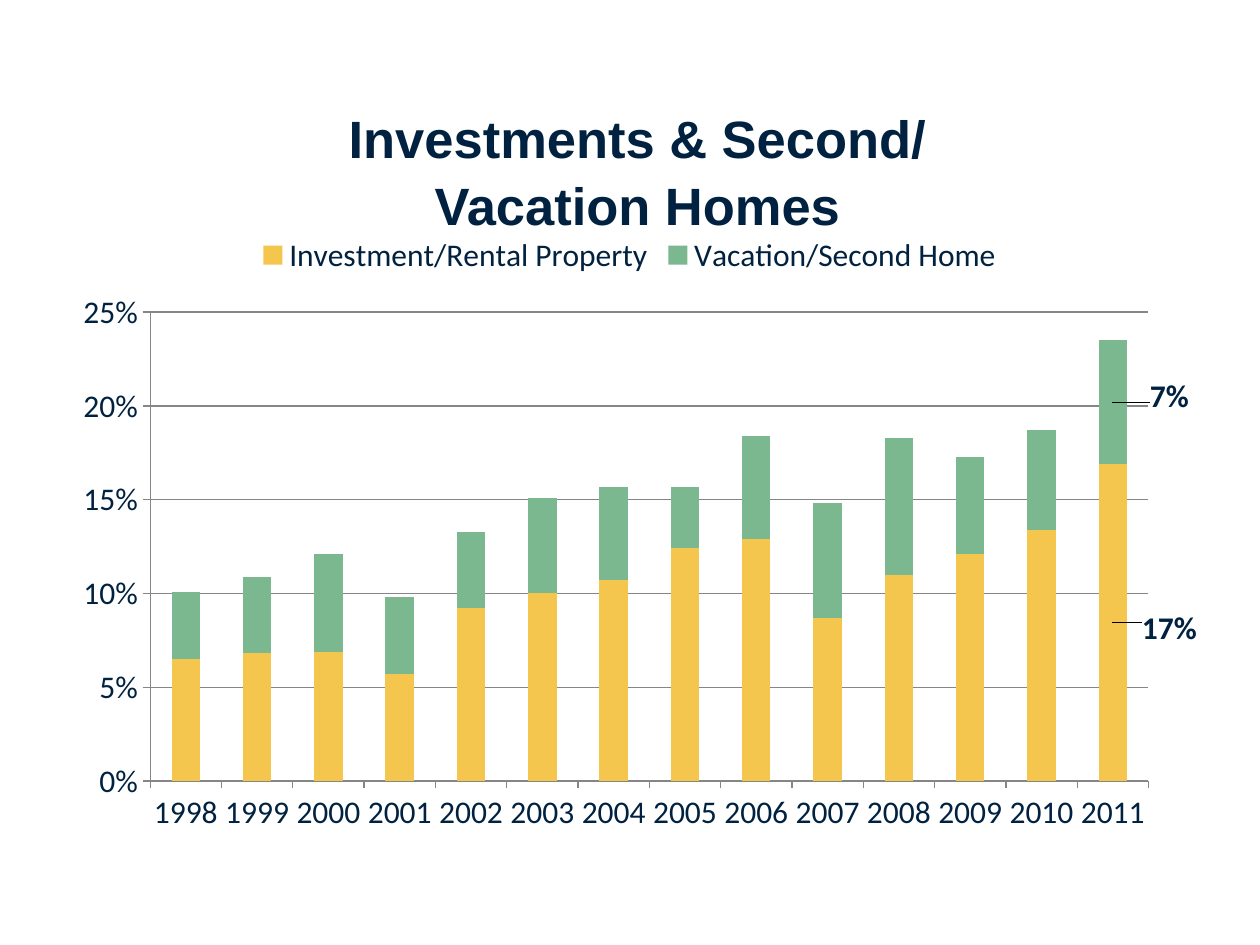
from lxml import etree
from pptx import Presentation
from pptx.chart.data import CategoryChartData
from pptx.dml.color import RGBColor
from pptx.enum.chart import XL_CHART_TYPE, XL_LEGEND_POSITION, XL_TICK_MARK
from pptx.enum.text import MSO_ANCHOR, MSO_AUTO_SIZE, PP_ALIGN
from pptx.oxml import parse_xml
from pptx.oxml.ns import nsdecls, qn
from pptx.util import Inches, Pt

NAVY = RGBColor(0x00, 0x22, 0x40)
GOLD = RGBColor(0xF5, 0xC6, 0x4D)
GREEN = RGBColor(0x7B, 0xB8, 0x8F)
GRAY = RGBColor(0x86, 0x86, 0x86)

YEARS = [str(year) for year in range(1998, 2012)]
SERIES = [
    ("Investment/Rental Property", GOLD, (0.05, 0.01),
     [0.065, 0.068, 0.069, 0.057, 0.092, 0.1, 0.107,
      0.124, 0.129, 0.087, 0.11, 0.121, 0.134, 0.169]),
    ("Vacation/Second Home", GREEN, (0.05, -0.01),
     [0.036, 0.041, 0.052, 0.041, 0.041, 0.051, 0.05,
      0.033, 0.055, 0.061, 0.073, 0.052, 0.053, 0.066]),
]


def manual_layout(**settings):
    layout = parse_xml(f'<c:layout {nsdecls("c")}><c:manualLayout/></c:layout>')
    for name, value in settings.items():
        etree.SubElement(layout[0], qn(f"c:{name}")).set("val", str(value))
    return layout


def add_title(slide, left, top, width, height):
    title = slide.shapes.title
    title.left, title.top, title.width, title.height = left, top, width, height
    tf = title.text_frame
    tf.auto_size = MSO_AUTO_SIZE.NONE
    tf.vertical_anchor = MSO_ANCHOR.TOP
    tf.text = "Investments & Second/\vVacation Homes"
    p = tf.paragraphs[0]
    p.alignment = PP_ALIGN.CENTER
    p.line_spacing = 1.05
    p.font.name, p.font.size, p.font.bold = "Arial", Pt(30), True
    p.font.color.rgb = NAVY


def format_axis(axis):
    axis.major_tick_mark = XL_TICK_MARK.OUTSIDE
    axis.minor_tick_mark = XL_TICK_MARK.NONE
    axis.format.line.color.rgb = GRAY


def label_last_point(series, offset):
    label = series.points[len(YEARS) - 1].data_label
    label.font.size, label.font.bold = Pt(18), True
    label.font.color.rgb = NAVY
    series.data_labels.show_value = False
    labels = series.data_labels._element
    x, y = offset
    labels.find(qn("c:dLbl")).insert(1, manual_layout(x=x, y=y))


def add_homes_chart(slide, left, top, width, height):
    data = CategoryChartData(number_format="0%")
    data.categories = YEARS
    for name, _, _, values in SERIES:
        data.add_series(name, values)
    chart = slide.shapes.add_chart(
        XL_CHART_TYPE.COLUMN_STACKED, left, top, width, height, data).chart
    chart.has_title = False
    chart.font.name, chart.font.size = "Calibri", Pt(18)
    chart.font.color.rgb = NAVY
    chart.has_legend = True
    chart.legend.position = XL_LEGEND_POSITION.TOP
    chart.legend.include_in_layout = False

    plot = chart.plots[0]
    plot.gap_width, plot.overlap = 150, 100
    plot.vary_by_categories = False
    for series, (_, color, offset, _) in zip(plot.series, SERIES):
        series.format.fill.solid()
        series.format.fill.fore_color.rgb = color
        label_last_point(series, offset)

    format_axis(chart.category_axis)
    axis = chart.value_axis
    format_axis(axis)
    axis.minimum_scale, axis.maximum_scale, axis.major_unit = 0, 0.25, 0.05
    axis.has_major_gridlines = True
    axis.major_gridlines.format.line.color.rgb = GRAY
    axis.tick_labels.number_format = "0%"
    axis.tick_labels.number_format_is_linked = False

    area = chart._chartSpace.chart.plotArea
    for layout in area.findall(qn("c:layout")):
        area.remove(layout)
    area.insert(0, manual_layout(
        layoutTarget="inner", xMode="edge", yMode="edge",
        x=0.077, y=0.147, w=0.881, h=0.752))


def main():
    prs = Presentation()
    prs.slide_width, prs.slide_height = Inches(10), Inches(7.5)
    slide = prs.slides.add_slide(prs.slide_layouts[5])
    add_title(slide, Inches(1.08), Inches(0.77), Inches(7.96), Inches(0.89))
    add_homes_chart(slide, Inches(0.5), Inches(1.75), Inches(9), Inches(4.95))
    prs.save("out.pptx")


if __name__ == "__main__":
    main()
